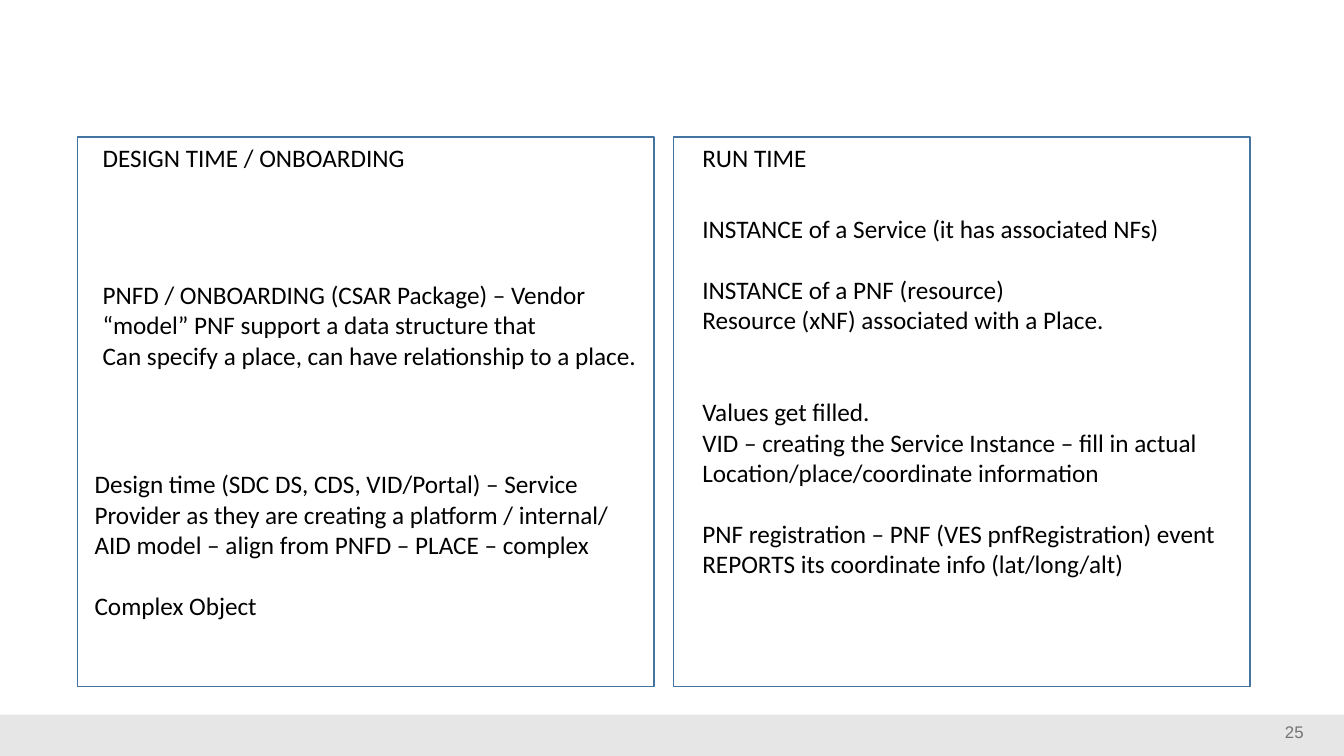
import pptx
import pptx.dml.color
import pptx.enum.shapes
import pptx.enum.text
import pptx.util

Pt = pptx.util.Pt
COLORS = {"footer": "E7E6E6", "frame": "43739E", "text": "000000", "number": "737373"}
LINE_HEIGHT = 22

DESIGN_HEADING = [("DESIGN TIME / ONBOARDING", 0)]
RUN_HEADING = [("RUN TIME", 0)]
ONBOARDING = [
    ("PNFD / ONBOARDING (CSAR Package) – Vendor", 0),
    ("“model” PNF support a data structure that", 0),
    ("Can specify a place, can have relationship to a place.", 0),
]
DESIGN_TIME = [
    ("Design time (SDC DS, CDS, VID/Portal) – Service", 0),
    ("Provider as they are creating a platform / internal/", 0),
    ("AID model – align from PNFD – PLACE – complex", 0),
    ("Complex Object", 1),
]
RUN_TIME = [
    ("INSTANCE of a Service (it has associated NFs)", 0),
    ("INSTANCE of a PNF (resource)", 1),
    ("Resource (xNF) associated with a Place.", 0),
    ("Values get filled.", 2),
    ("VID – creating the Service Instance – fill in actual", 0),
    ("Location/place/coordinate information", 0),
    ("PNF registration – PNF (VES pnfRegistration) event", 1),
    ("REPORTS its coordinate info (lat/long/alt)", 0),
]


def rgb(name):
    """Return the named colour."""
    return pptx.dml.color.RGBColor.from_string(COLORS[name])


def add_rectangle(slide, left, top, width, height, fill=None, line=None):
    """Add a rectangle with an optional fill and outline."""
    rectangle = slide.shapes.add_shape(
        pptx.enum.shapes.MSO_SHAPE.RECTANGLE, Pt(left), Pt(top), Pt(width), Pt(height))
    rectangle.shadow.inherit = False
    if fill:
        rectangle.fill.solid()
        rectangle.fill.fore_color.rgb = rgb(fill)
    else:
        rectangle.fill.background()
    if line:
        rectangle.line.color.rgb = rgb(line)
        rectangle.line.width = Pt(1)
    else:
        rectangle.line.fill.background()


def add_text(slide, left, top, width, height, lines, size=18, font="Calibri", color="text"):
    """Add unwrapped lines, each paired with the number of line gaps before it."""
    frame = slide.shapes.add_textbox(Pt(left), Pt(top), Pt(width), Pt(height)).text_frame
    frame.word_wrap = False
    frame.vertical_anchor = pptx.enum.text.MSO_ANCHOR.TOP
    for index, (wording, gaps) in enumerate(lines):
        paragraph = frame.add_paragraph() if index else frame.paragraphs[0]
        paragraph.text = wording
        paragraph.alignment = pptx.enum.text.PP_ALIGN.LEFT
        if gaps:
            paragraph.space_before = Pt(gaps * LINE_HEIGHT)
        paragraph.font.size = Pt(size)
        paragraph.font.name = font
        paragraph.font.color.rgb = rgb(color)


def main():
    """Build the slide comparing design time with run time."""
    deck = pptx.Presentation()
    deck.slide_width, deck.slide_height = Pt(960), Pt(540)
    slide = deck.slides.add_slide(deck.slide_layouts[6])

    add_rectangle(slide, 0, 510.5, 960, 29.5, fill="footer")
    add_text(slide, 910.8, 512, 47.5, 28.8, [("25", 0)], 12, "Arial", "number")
    for panel_left in (55.4, 481):
        add_rectangle(slide, panel_left, 98, 411.8, 392.4, line="frame")

    add_text(slide, 66.2, 98, 232.6, 29, DESIGN_HEADING)
    add_text(slide, 494.6, 98, 90, 29, RUN_HEADING)
    add_text(slide, 66.2, 196, 400.3, 72.7, ONBOARDING)
    add_text(slide, 60.5, 331.2, 386.6, 116.6, DESIGN_TIME)
    add_text(slide, 494.6, 149, 385.2, 269.3, RUN_TIME)
    deck.save("out.pptx")


if __name__ == "__main__":
    main()
